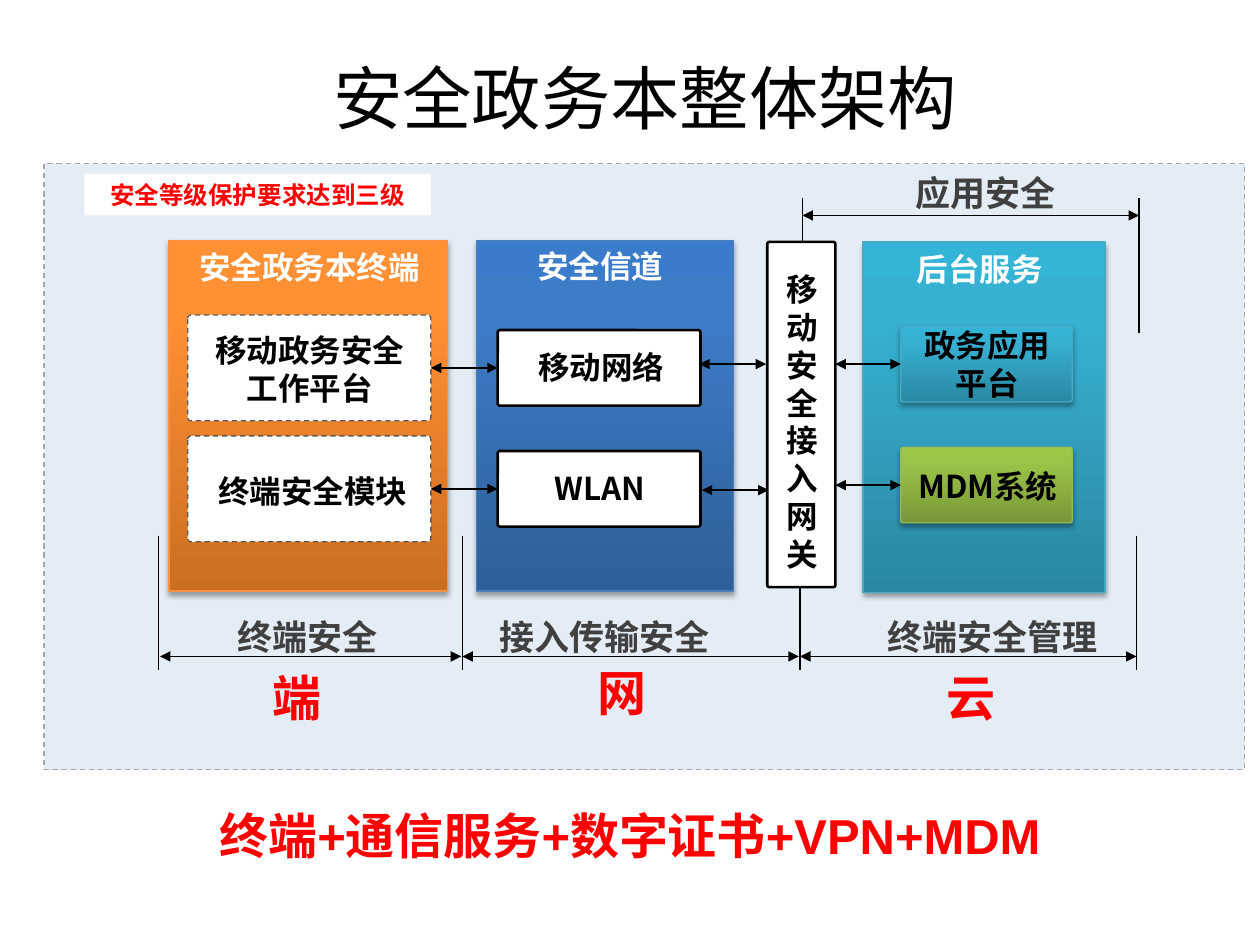
"""Builds the slide on the overall architecture of a secure government notebook."""
from lxml import etree
from pptx import Presentation, util as u
from pptx.dml.color import RGBColor
from pptx.enum import dml, shapes, text
from pptx.oxml import ns, parse_xml

Inches, Pt = u.Inches, u.Pt
SHAPE = shapes.MSO_SHAPE
CJK = "Noto Sans CJK SC"
COLORS = {
    "black": "000000", "white": "FFFFFF", "red": "FF0000", "label": "404040",
    "panel": "346DB2", "panel_edge": "A6A6A6", "module_edge": "595959",
    "orange_edge": "F69240", "blue_edge": "4B7EBC",
    "teal_edge": "46AAC5", "green_edge": "98B955",
}
GRADIENTS = {
    "orange": ("CC6E20", "FF9034", "FF9136"),
    "blue": ("2F5F99", "3D7CC7", "3A7CCB"),
    "teal": ("2A88A2", "37B1D2", "34B4D6"),
    "green": ("779737", "9BC348", "9DC746"),
}


class Diagram:
    """Holds the style and the current page, with a method for each element."""

    def __init__(self, page):
        self.page = page

    def color(self, name):
        return RGBColor.from_string(COLORS[name])

    def add_shadow(self, effects):
        effects.append(parse_xml(
            f'<a:outerShdw {ns.nsdecls("a")} blurRad="{Pt(3.1)}" dist="{Pt(1.8)}" '
            'dir="5400000" rotWithShape="0"><a:srgbClr val="000000">'
            '<a:alpha val="35000"/></a:srgbClr></a:outerShdw>'))

    def fill_text(self, box, words, size, color, font=CJK, bold=True, spacing=None,
                  inset=(0.1, 0.05), anchor=text.MSO_ANCHOR.MIDDLE):
        frame = box.text_frame
        frame.text = words
        frame.word_wrap = True
        frame.vertical_anchor = anchor
        frame.margin_left = frame.margin_right = Inches(inset[0])
        frame.margin_top = frame.margin_bottom = Inches(inset[1])
        para = frame.paragraphs[0]
        para.alignment = text.PP_ALIGN.CENTER
        if spacing:
            para.line_spacing = spacing
        span = para.runs[0]
        span.font.size, span.font.bold, span.font.name = Pt(size), bold, font
        span.font.color.rgb = self.color(color)
        east_asian = etree.SubElement(span.font._element, ns.qn("a:ea"))
        east_asian.set("typeface", CJK)
        return span

    def text(self, words, at, size=18, color="black", **style):
        box = self.page.shapes.add_textbox(*map(Inches, at))
        self.fill_text(box, words, size, color, **style)

    def box(self, at, kind=SHAPE.RECTANGLE, fill=None, edge=None, width=0.75, dashed=False):
        box = self.page.shapes.add_shape(kind, *map(Inches, at))
        box.shadow.inherit = False
        if kind == SHAPE.ROUNDED_RECTANGLE:
            box.adjustments[0] = 0.03
        if fill:
            box.fill.solid()
            box.fill.fore_color.rgb = self.color(fill)
        else:
            box.fill.background()
        if edge:
            box.line.color.rgb = self.color(edge)
            box.line.width = Pt(width)
            if dashed:
                box.line.dash_style = dml.MSO_LINE.DASH
        else:
            box.line.fill.background()
        return box

    def panel(self, at):
        box = self.box(at, fill="panel", edge="panel_edge", dashed=True)
        tint = box._element.spPr.find(".//" + ns.qn("a:srgbClr"))
        etree.SubElement(tint, ns.qn("a:alpha")).set("val", "13000")

    def gradient_box(self, at, hue, kind=SHAPE.RECTANGLE):
        box = self.box(at, kind, edge=hue + "_edge")
        properties = box._element.spPr
        stops = "".join(f'<a:gs pos="{position}"><a:srgbClr val="{shade}"/></a:gs>'
                        for position, shade in zip((0, 80000, 100000), GRADIENTS[hue]))
        gradient = parse_xml(f'<a:gradFill {ns.nsdecls("a")} rotWithShape="1"><a:gsLst>{stops}'
                             '</a:gsLst><a:lin ang="16200000" scaled="0"/></a:gradFill>')
        properties.replace(properties.find(ns.qn("a:noFill")), gradient)
        self.add_shadow(properties.find(ns.qn("a:effectLst")))
        return box

    def label(self, words, at, size=20, color="label"):
        box = self.box(at, SHAPE.ROUND_2_SAME_RECTANGLE)
        box.adjustments[0] = 0
        span = self.fill_text(box, words, size, color, font="Arial", inset=(0.02, 0.01))
        effects = etree.Element(ns.qn("a:effectLst"))
        self.add_shadow(effects)
        span.font._element.find(ns.qn("a:solidFill")).addnext(effects)

    def line(self, start, end, arrows=True, source=None, target=None):
        line = self.page.shapes.add_connector(
            shapes.MSO_CONNECTOR.STRAIGHT, *map(Inches, start + end))
        line.line.color.rgb = self.color("black")
        line.line.width = Pt(0.75)
        if arrows:
            stroke = line.line._get_or_add_ln()
            for tip in ("a:headEnd", "a:tailEnd"):
                etree.SubElement(stroke, ns.qn(tip)).set("type", "triangle")
        etree.SubElement(line._element.spPr, ns.qn("a:effectLst"))
        if source is not None:
            line.begin_connect(source, 3)
        if target is not None:
            line.end_connect(target, 1)


def main():
    deck = Presentation()
    deck.slide_width, deck.slide_height = Inches(10), Inches(7.5)
    diagram = Diagram(deck.slides.add_slide(deck.slide_layouts[6]))
    rounded = SHAPE.ROUNDED_RECTANGLE

    diagram.panel((0.35, 1.3, 9.53, 4.81))
    diagram.text("安全政务本整体架构", (0.6, 0.29, 9.04, 0.62), 39.6, bold=False, spacing=1.5)

    for x, top in ((6.37, 1.57), (9.04, 1.57), (1.26, 4.25),
                   (3.67, 4.25), (6.35, 4.25), (9.02, 4.25)):
        diagram.line((x, top), (x, top + 1.07), arrows=False)
    for left, right, y in ((6.37, 9.04, 1.71), (1.27, 3.66, 5.21),
                           (3.67, 6.34, 5.21), (6.35, 9.02, 5.21)):
        diagram.line((left, y), (right, y))

    for words, left, top, width in (("终端安全", 1.71, 4.86, 1.46),
                                    ("接入传输安全", 3.78, 4.86, 2.04),
                                    ("终端安全管理", 6.98, 4.86, 1.79),
                                    ("应用安全", 6.93, 1.34, 1.79)):
        diagram.label(words, (left, top, width, 0.38))
    for words, left, width, height in (("端", 1.63, 1.46, 0.38), ("网", 4.02, 1.84, 0.3),
                                       ("云", 6.98, 1.46, 0.38)):
        diagram.label(words, (left, 5.34, width, height), 28, "red")

    for hue, column, heading, at in (
            ("orange", (1.34, 1.91, 2.21, 2.78), "安全政务本终端", (1.49, 2.05, 1.93, 0.23)),
            ("blue", (3.78, 1.91, 2.04, 2.78), "安全信道", (4.21, 2.04, 1.11, 0.22)),
            ("teal", (6.85, 1.92, 1.92, 2.78), "后台服务", (7.22, 2.06, 1.11, 0.22))):
        diagram.gradient_box(column, hue)
        diagram.text(heading, at, color="white", spacing=Pt(16), inset=(0, 0),
                     anchor=text.MSO_ANCHOR.TOP)

    diagram.box((6.09, 1.92, 0.54, 2.74), rounded, "white", "black", 1.5)
    diagram.text("移动安全接入网关", (6.14, 2.21, 0.43, 2.27))

    for row, hue in enumerate(("teal", "green")):
        drop = 0.96 * row
        module = diagram.box((1.49, 2.5 + drop, 1.93, 0.84), rounded, "white",
                             "module_edge", dashed=True)
        network = diagram.box((3.95, 2.62 + drop, 1.61, 0.6), rounded, "white", "black", 1.5)
        service = diagram.gradient_box((7.15, 2.59 + drop, 1.36, 0.6), hue, rounded)
        diagram.line((3.42, 2.92 + drop), (3.95, 2.92 + drop), source=module, target=network)
        diagram.line((6.63, 2.89 + drop), (7.15, 2.89 + drop), target=service)
    for left, y in ((5.55, 2.89), (5.57, 3.89)):
        diagram.line((left, y), (left + 0.53, y))

    for words, at in (("移动政务安全工作平台", (1.57, 2.67, 1.78, 0.52)),
                      ("终端安全模块", (1.59, 3.73, 1.78, 0.34)),
                      ("移动网络", (3.88, 2.68, 1.78, 0.46)),
                      ("WLAN", (3.87, 3.7, 1.78, 0.34)),
                      ("政务应用平台", (7.13, 2.66, 1.41, 0.46)),
                      ("MDM系统", (7.05, 3.69, 1.58, 0.34))):
        diagram.text(words, at)

    level = diagram.box((0.67, 1.38, 2.75, 0.33), fill="white")
    diagram.fill_text(level, "安全等级保护要求达到三级", 14, "red")
    diagram.text("终端+通信服务+数字证书+VPN+MDM", (0.5, 6.11, 9, 0.79), 28, "red",
                 font="Arial", spacing=1.5, anchor=text.MSO_ANCHOR.TOP)
    deck.save("out.pptx")


if __name__ == "__main__":
    main()
